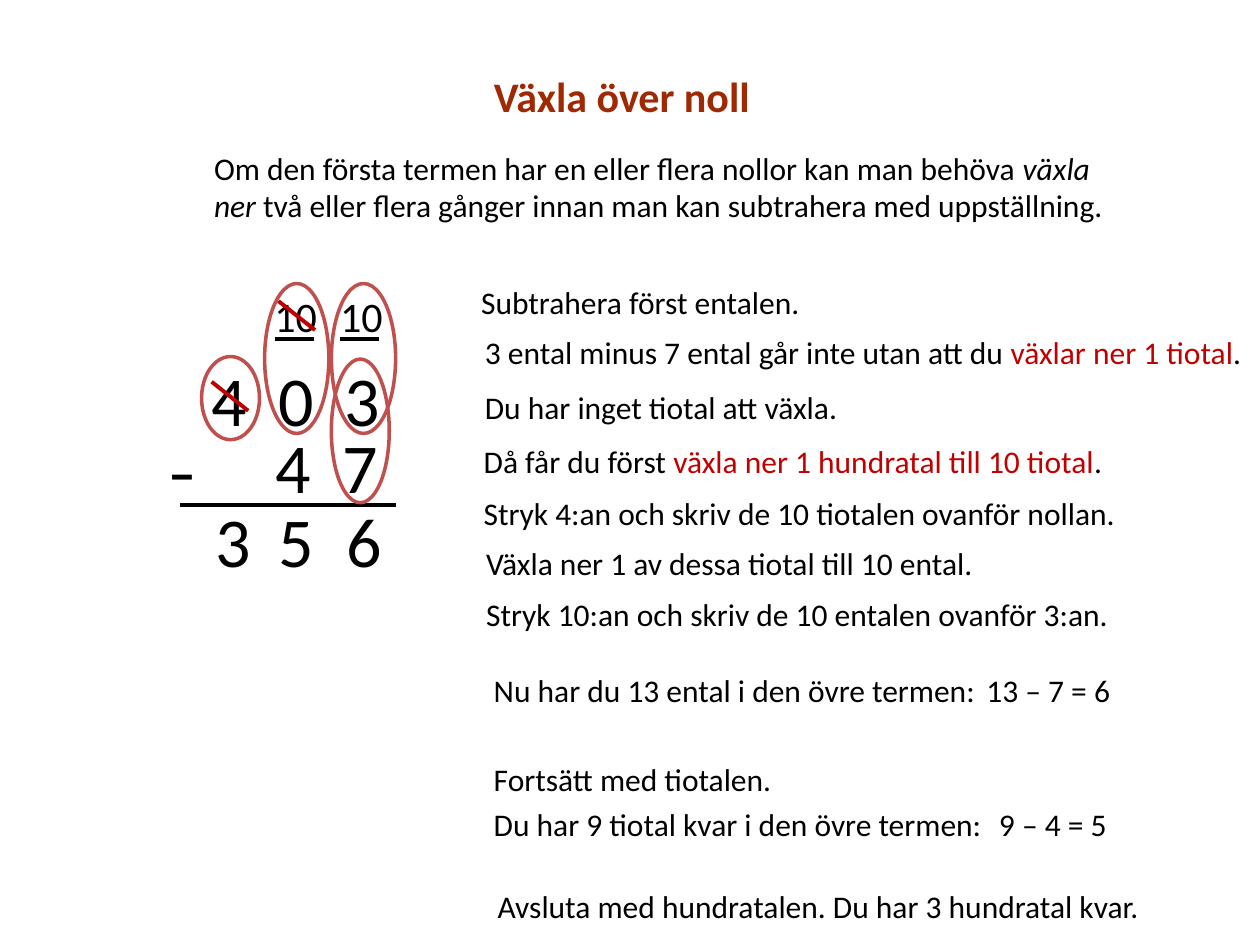
from lxml.etree import SubElement
from pptx import Presentation
from pptx.dml.color import RGBColor
from pptx.enum.shapes import MSO_CONNECTOR, MSO_SHAPE
from pptx.enum.text import MSO_ANCHOR, MSO_AUTO_SIZE, PP_ALIGN
from pptx.oxml.ns import qn
from pptx.util import Inches, Pt

COLORS = {"title": "9E2903", "text": "000000", "red": "C00000", "ring": "C0504D"}


def write(sp, text, size=18, color="text", bold=False, mark="", mark_color="text",
          mark_italic=False, tabs=()):
    """Fill a shape with one paragraph; the part equal to mark gets its own format."""
    tf = sp.text_frame
    tf.word_wrap = True
    tf.auto_size = MSO_AUTO_SIZE.NONE
    tf.vertical_anchor = MSO_ANCHOR.TOP
    p = tf.paragraphs[0]
    p.alignment = PP_ALIGN.LEFT
    if tabs:
        stops = SubElement(p._p.get_or_add_pPr(), qn("a:tabLst"))
        for x in tabs:
            SubElement(stops, qn("a:tab"), pos=str(Inches(x)), algn="l")
    for part in text.partition(mark) if mark else [text]:
        if part:
            r = p.add_run()
            r.text = part
            r.font.name = "Calibri"
            r.font.size = Pt(size)
            r.font.bold = bold
            r.font.italic = mark_italic and part == mark
            r.font.color.rgb = RGBColor.from_string(
                COLORS[mark_color if part == mark else color])
    return p


def add_line(shapes, x1, y1, x2, y2, color="text"):
    line = shapes.add_connector(MSO_CONNECTOR.STRAIGHT, Inches(x1), Inches(y1),
                                Inches(x2), Inches(y2))
    line.line.color.rgb = RGBColor.from_string(COLORS[color])
    line.line.width = Pt(2.25)
    SubElement(line._element.spPr, qn("a:effectLst"))


prs = Presentation()
prs.slide_width, prs.slide_height = Inches(10), Inches(7.5)
s = prs.slides.add_slide(prs.slide_layouts[5])

# Title and introduction
title = s.shapes.title
title.left, title.top, title.width, title.height = map(Inches, (3.82, 0.51, 2.55, 0.5))
write(title, "Växla över noll", size=24, color="title", bold=True)
intro = s.shapes.add_textbox(Inches(1.6), Inches(1.13), Inches(7.48), Inches(0.71))
write(intro, "Om den första termen har en eller flera nollor kan man behöva växla ner "
      "två eller flera gånger innan man kan subtrahera med uppställning.",
      mark="växla ner", mark_italic=True)

# The two terms, with digits on tab stops
first_term = s.shapes.add_textbox(Inches(1.58), Inches(2.78), Inches(2.24), Inches(0.77))
write(first_term, "4\t0\t3", size=40, tabs=(0.53, 1.06))
second_term = s.shapes.add_textbox(Inches(1.24), Inches(3.31), Inches(2.74), Inches(0.77))
p = write(second_term, "–\t4\t7", size=40, mark="–", tabs=(0.85, 1.38))
p.runs[0].font.size = Pt(32)
p.runs[0].font.bold = True
add_line(s.shapes, 1.43, 4.01, 3.14, 4.01)

# The answer
for digit, x in (("3", 1.61), ("5", 2.11), ("6", 2.65)):
    sp = s.shapes.add_textbox(Inches(x), Inches(3.9), Inches(0.46), Inches(0.77))
    write(sp, digit, size=40)

# Exchanged tens above the columns
for x in (2.08, 2.6):
    group = s.shapes.add_group_shape()
    add_line(group.shapes, x + 0.1, 2.69, x + 0.41, 2.69)
    sp = group.shapes.add_textbox(Inches(x), Inches(2.26), Inches(0.55), Inches(0.5))
    write(sp, "10", size=24)

# Rings and strikes
for ring in ((2.63, 2.85, 0.46, 1.14), (2.1, 2.25, 0.51, 1.19),
             (1.6, 2.83, 0.46, 0.66), (2.63, 2.25, 0.51, 1.19)):
    sp = s.shapes.add_shape(MSO_SHAPE.OVAL, *map(Inches, ring))
    sp.shadow.inherit = False
    sp.fill.background()
    sp.line.color.rgb = RGBColor.from_string(COLORS["ring"])
    sp.line.width = Pt(2)
for x, y in ((2.21, 2.39), (1.68, 3.03)):
    add_line(s.shapes, x, y, x + 0.29, y + 0.23, color="red")

# Explanation: left, top, width, text, red part
steps = [
    (3.72, 2.2, 4, "Subtrahera först entalen.", ""),
    (3.75, 2.59, 6.33, "3 ental minus 7 ental går inte utan att du växlar ner 1 tiotal.",
     "växlar ner 1 tiotal"),
    (3.75, 3.03, 4.86, "Du har inget tiotal att växla.", ""),
    (3.74, 3.46, 5.25, "Då får du först växla ner 1 hundratal till 10 tiotal.",
     "växla ner 1 hundratal till 10 tiotal"),
    (3.74, 3.87, 6.07, "Stryk 4:an och skriv de 10 tiotalen ovanför nollan.", ""),
    (3.76, 4.27, 6.07, "Växla ner 1 av dessa tiotal till 10 ental.", ""),
    (3.76, 4.67, 6.07, "Stryk 10:an och skriv de 10 entalen ovanför 3:an.", ""),
    (3.82, 5.28, 4.48, "Nu har du 13 ental i den övre termen:", ""),
    (7.73, 5.28, 1.52, "13 – 7 = 6", ""),
    (3.82, 5.98, 4.48, "Fortsätt med tiotalen.", ""),
    (3.82, 6.34, 4.25, "Du har 9 tiotal kvar i den övre termen:", ""),
    (7.83, 6.34, 1.52, "9 – 4 = 5", ""),
    (3.85, 6.99, 5.72, "Avsluta med hundratalen. Du har 3 hundratal kvar.", ""),
]
for x, y, w, text, mark in steps:
    sp = s.shapes.add_textbox(Inches(x), Inches(y), Inches(w), Inches(0.4))
    write(sp, text, mark=mark, mark_color="red")

prs.save("out.pptx")
